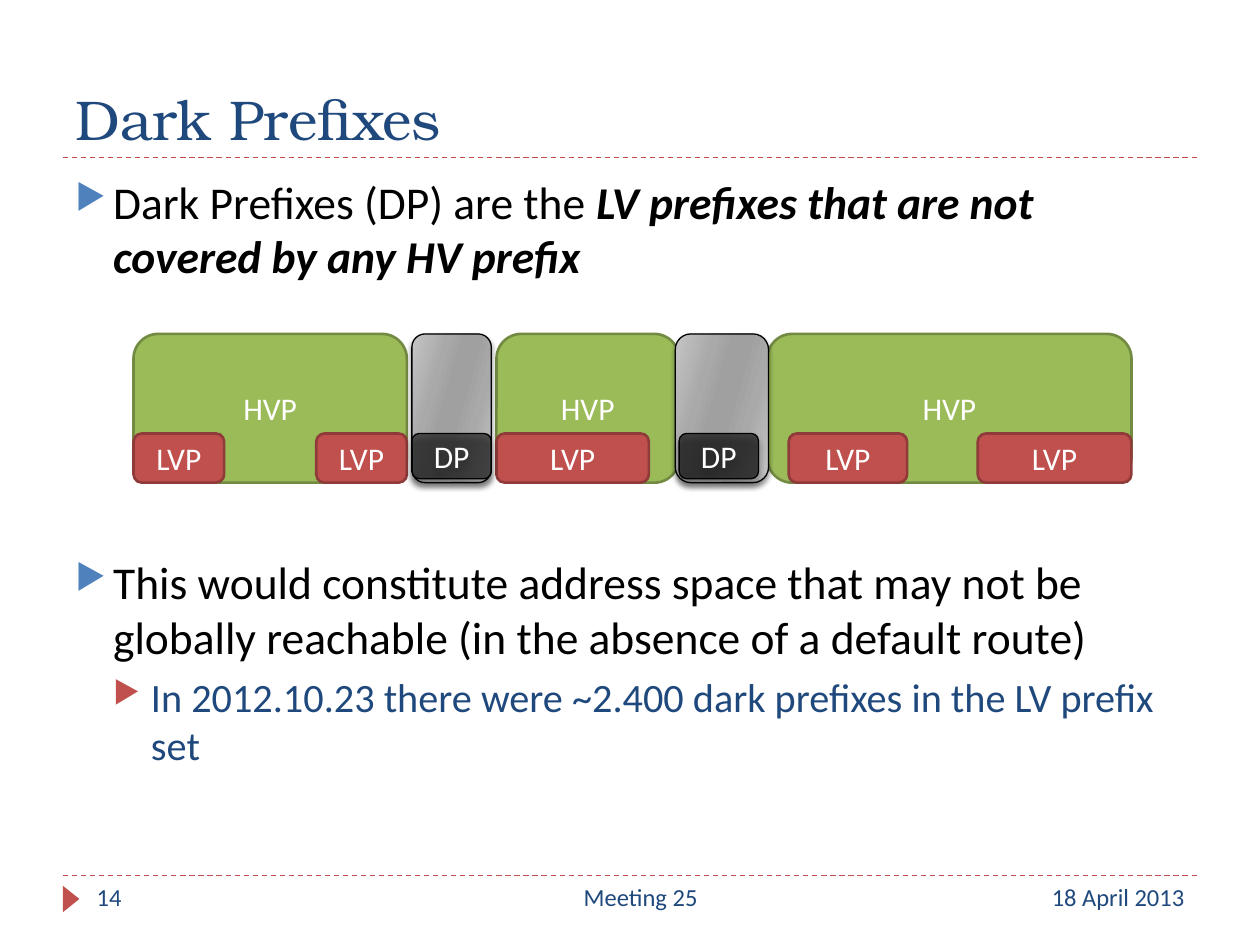
import dataclasses

import lxml.etree
import pptx
import pptx.dml.color
import pptx.enum.dml
import pptx.enum.shapes
import pptx.enum.text
import pptx.oxml
import pptx.oxml.ns
import pptx.util

Pt = pptx.util.Pt
SHAPES = pptx.enum.shapes.MSO_SHAPE
ALIGN = pptx.enum.text.PP_ALIGN
ANCHOR = pptx.enum.text.MSO_ANCHOR
qn = pptx.oxml.ns.qn
NAMESPACE = 'xmlns:a="http://schemas.openxmlformats.org/drawingml/2006/main"'


@dataclasses.dataclass(frozen=True)
class Theme:
    heading_font: str = "TeX Gyre Bonum"
    body_font: str = "Calibri"
    navy: str = "1F497D"
    blue: str = "4F81BD"
    red: str = "C0504D"
    red_edge: str = "8E3B39"
    green: str = "9BBB59"
    green_edge: str = "738A42"
    black: str = "000000"
    white: str = "FFFFFF"
    grays: tuple = ((0, "C5C5C5"), (30, "A9A9A9"), (45, "A0A0A0"),
                    (55, "A0A0A0"), (73, "A9A9A9"), (100, "C5C5C5"))
    title_size: float = 32
    body_size: float = 26
    detail_size: float = 23
    label_size: float = 18
    footer_size: float = 14


THEME = Theme()


def rgb(color):
    return pptx.dml.color.RGBColor.from_string(color)


def add_run(paragraph, text, size, color, font=THEME.body_font, emphasis=False):
    run = paragraph.add_run()
    run.text = text
    run.font.name = font
    run.font.size = Pt(size)
    run.font.color.rgb = rgb(color)
    run.font.bold = run.font.italic = emphasis


def add_text_box(slide, box, anchor=ANCHOR.TOP):
    frame = slide.shapes.add_textbox(*map(Pt, box)).text_frame
    frame.word_wrap = True
    frame.vertical_anchor = anchor
    return frame


def add_rule(slide, left, top, width):
    """Dashed horizontal line."""
    line = slide.shapes.add_connector(
        pptx.enum.shapes.MSO_CONNECTOR.STRAIGHT,
        Pt(left), Pt(top), Pt(left + width), Pt(top))
    line.line.color.rgb = rgb(THEME.red)
    line.line.width = Pt(0.75)
    line.line.dash_style = pptx.enum.dml.MSO_LINE.DASH
    lxml.etree.SubElement(line._element.spPr, qn("a:effectLst"))


def add_block(slide, box, fill, edge, edge_width, label=""):
    """Rounded block with an optional centred label."""
    shape = slide.shapes.add_shape(SHAPES.ROUNDED_RECTANGLE, *map(Pt, box))
    shape.shadow.inherit = False
    shape.fill.solid()
    shape.fill.fore_color.rgb = rgb(fill)
    shape.line.color.rgb = rgb(edge)
    shape.line.width = Pt(edge_width)
    if label:
        shape.text_frame.vertical_anchor = ANCHOR.MIDDLE
        paragraph = shape.text_frame.paragraphs[0]
        paragraph.alignment = ALIGN.CENTER
        add_run(paragraph, label, THEME.label_size, THEME.white)
    return shape


def set_shadow(shape, blur, distance):
    effects = shape._element.spPr.find(qn("a:effectLst"))
    effects.append(pptx.oxml.parse_xml(
        f'<a:outerShdw {NAMESPACE} blurRad="{Pt(blur)}" dist="{Pt(distance)}" '
        f'dir="5400000" rotWithShape="0"><a:srgbClr val="{THEME.black}">'
        '<a:alpha val="40000"/></a:srgbClr></a:outerShdw>'))


def set_gradient(shape, stops, angle):
    stop_xml = "".join(
        f'<a:gs pos="{position * 1000}"><a:srgbClr val="{color}"/></a:gs>'
        for position, color in stops)
    gradient = pptx.oxml.parse_xml(
        f'<a:gradFill {NAMESPACE} rotWithShape="1"><a:gsLst>{stop_xml}</a:gsLst>'
        f'<a:lin ang="{angle * 60000}" scaled="0"/></a:gradFill>')
    properties = shape._element.spPr
    properties.replace(properties.find(qn("a:solidFill")), gradient)


def set_opacity(shape, percent):
    color = shape._element.spPr.find(qn("a:solidFill"))[0]
    lxml.etree.SubElement(color, qn("a:alpha")).set("val", str(percent * 1000))


def set_bullet(paragraph, indent, color):
    properties = paragraph._p.get_or_add_pPr()
    properties.set("marL", str(Pt(indent)))
    properties.set("indent", str(-Pt(21.6)))
    for xml in (f'<a:buClr {NAMESPACE}><a:srgbClr val="{color}"/></a:buClr>',
                f'<a:buSzPct {NAMESPACE} val="76000"/>',
                f'<a:buChar {NAMESPACE} char="▶"/>'):
        properties.append(pptx.oxml.parse_xml(xml))


def add_title(slide, box):
    left, top, width, height = box
    add_rule(slide, left, top + height, width)
    frame = add_text_box(slide, box, ANCHOR.BOTTOM)
    add_run(frame.paragraphs[0], "Dark Prefixes", THEME.title_size,
            THEME.navy, THEME.heading_font)


def add_body(slide, box):
    frame = add_text_box(slide, box)
    # space before, indent, bullet colour, size, text colour, (text, emphasis) runs
    items = (
        (6, 21.6, THEME.blue, THEME.body_size, THEME.black,
         (("Dark Prefixes (DP) are the ", False),
          ("LV prefixes that are not covered by any HV prefix", True))),
        # The wide space leaves room for the prefix diagram
        (155, 21.6, THEME.blue, THEME.body_size, THEME.black,
         (("This would constitute address space that may not be globally "
           "reachable (in the absence of a default route)", False),)),
        (5, 43.2, THEME.red, THEME.detail_size, THEME.navy,
         (("In 2012.10.23 there were ~2.400 dark prefixes in the LV prefix set",
           False),)),
    )
    for index, (space, indent, bullet, size, color, runs) in enumerate(items):
        paragraph = frame.add_paragraph() if index else frame.paragraphs[0]
        paragraph.space_before = Pt(space)
        set_bullet(paragraph, indent, bullet)
        for text, emphasis in runs:
            add_run(paragraph, text, size, color, emphasis=emphasis)


def add_prefix_diagram(slide, box):
    left, top, _, height = box
    low_height, dark_height = 28.1, 25.9
    low_top = top + height - low_height

    # High-visibility prefixes: offset and width
    for offset, width in ((0, 156.2), (362.2, 208.1), (207.4, 104.4)):
        add_block(slide, (left + offset, top, width, height),
                  THEME.green, THEME.green_edge, 1.5, "HVP")

    # Low-visibility prefixes along the bottom edge
    for offset, width in ((104.4, 51.8), (0, 51.8), (207.4, 87.1),
                          (374.4, 67.7), (482.4, 87.8)):
        add_block(slide, (left + offset, low_top, width, low_height),
                  THEME.red, THEME.red_edge, 1.5, "LVP")

    # Uncovered gaps
    for offset, width in ((309.6, 53.3), (159.1, 45.4)):
        gap = add_block(slide, (left + offset, top, width, height),
                        THEME.white, THEME.black, 0.75)
        set_gradient(gap, THEME.grays, 16)
        set_shadow(gap, 3, 2)

    # Dark prefixes: offset and opacity
    for offset, opacity in ((159.1, 56), (311.8, 61)):
        dark = add_block(slide, (left + offset, low_top, 45.4, dark_height),
                         THEME.black, THEME.black, 0.75, "DP")
        set_opacity(dark, opacity)
        set_shadow(dark, 4, 3.4)


def add_footer(slide, box):
    left, top, width, height = box
    add_rule(slide, left, top, width)
    marker = slide.shapes.add_shape(SHAPES.ISOSCELES_TRIANGLE, Pt(left - 2.9),
                                    Pt(top + 8.6), Pt(15.1), Pt(9.4))
    marker.rotation = 90
    marker.shadow.inherit = False
    marker.fill.solid()
    marker.fill.fore_color.rgb = rgb(THEME.red)
    marker.line.fill.background()
    for offset, field_width, text, alignment in (
            (12.2, 156, "14", ALIGN.LEFT),
            (192.2, 275.8, "Meeting 25", ALIGN.CENTER),
            (468, 180, "18 April 2013", ALIGN.RIGHT)):
        frame = add_text_box(slide, (left + offset, top, field_width, height))
        frame.paragraphs[0].alignment = alignment
        add_run(frame.paragraphs[0], text, THEME.footer_size, THEME.navy)


def main():
    presentation = pptx.Presentation()
    presentation.slide_width, presentation.slide_height = Pt(720), Pt(540)
    slide = presentation.slides.add_slide(presentation.slide_layouts[6])
    add_title(slide, (36, 12.2, 648, 77.8))
    add_body(slide, (36, 95.8, 648, 388.8))
    add_prefix_diagram(slide, (76.3, 190.8, 570.2, 85))
    add_footer(slide, (36, 500.4, 648, 28.8))
    presentation.save("out.pptx")


if __name__ == "__main__":
    main()
